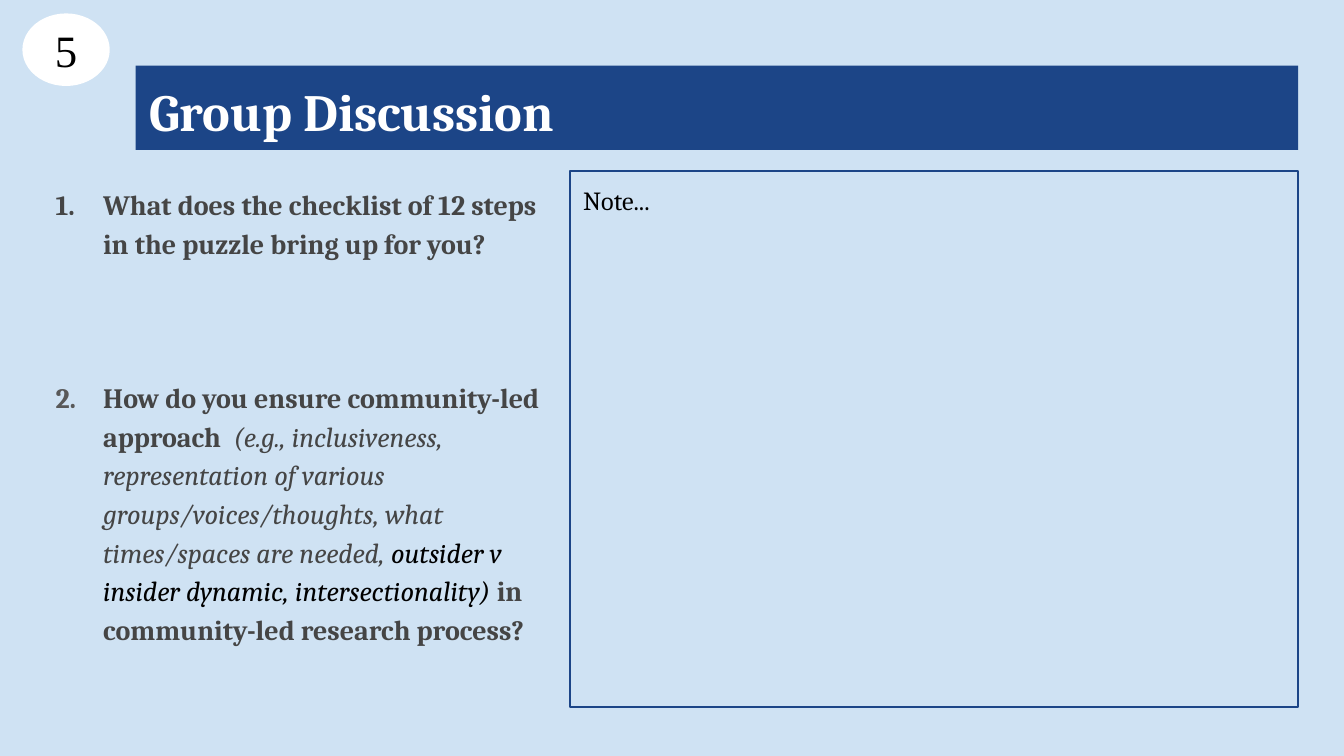
from pptx import Presentation
from pptx.dml.color import RGBColor
from pptx.enum import shapes, text
from pptx.oxml.ns import qn
from pptx.util import Pt
from lxml import etree

PALE_BLUE = RGBColor(0xCF, 0xE2, 0xF3)
NAVY = RGBColor(0x1C, 0x45, 0x87)
DARK_GRAY = RGBColor(0x45, 0x45, 0x45)
MID_GRAY = RGBColor(0x59, 0x59, 0x59)
WHITE = RGBColor(0xFF, 0xFF, 0xFF)
BLACK = RGBColor(0, 0, 0)
SERIF = "Cambria"

# Content: each question has a number colour and (text, bold, italic, colour) runs
TITLE = "Group Discussion"
STEP = "5"
NOTE = "Note..."
QUESTIONS = [
    (DARK_GRAY, [
        ("What does the checklist of 12 steps in the puzzle bring up for you?",
         True, False, DARK_GRAY),
    ]),
    (MID_GRAY, [
        ("How do you ensure community-led approach  ", True, False, DARK_GRAY),
        ("(e.g., inclusiveness, representation of various groups/voices/thoughts, "
         "what times/spaces are needed, ", False, True, DARK_GRAY),
        ("outsider v insider dynamic, intersectionality) ", False, True, BLACK),
        ("in community-led research process?", True, False, DARK_GRAY),
    ]),
]

# Layout in points: left, top, width, height
RIGHT = 695.5
TITLE_BOX = (72.7, 35.1, RIGHT - 72.7, 45.2)
QUESTION_BOX = (12.2, 90.7, 289.4, 269.3)
NOTE_BOX = (305.3, 91.7, RIGHT - 305.3, 287.2)
STEP_BOX = (12, 7.2, 46.8, 38.9)
INSET = 7.2
QUESTION_GAP = 62


def set_frame(shape, anchor=text.MSO_ANCHOR.TOP):
    frame = shape.text_frame
    frame.word_wrap = True
    frame.auto_size = text.MSO_AUTO_SIZE.NONE
    frame.vertical_anchor = anchor
    frame.margin_left = frame.margin_right = Pt(INSET)
    frame.margin_top = frame.margin_bottom = Pt(INSET)
    return frame


def write_line(frame, content, size, color, font=SERIF, bold=False,
               align=text.PP_ALIGN.LEFT):
    paragraph = frame.paragraphs[0]
    paragraph.text = content
    paragraph.alignment = align
    paragraph.font.name = font
    paragraph.font.size = Pt(size)
    paragraph.font.bold = bold
    paragraph.font.color.rgb = color


def add_plain_shape(slide, kind, box):
    shape = slide.shapes.add_shape(kind, *map(Pt, box))
    shape.shadow.inherit = False
    return shape


def number_paragraph(paragraph, number, color):
    properties = paragraph._p.get_or_add_pPr()
    properties.set("marL", str(Pt(36)))
    properties.set("indent", str(-Pt(25.5)))
    bullet_color = etree.SubElement(properties, qn("a:buClr"))
    etree.SubElement(bullet_color, qn("a:srgbClr"), val=str(color))
    etree.SubElement(properties, qn("a:buFont"), typeface=SERIF)
    etree.SubElement(properties, qn("a:buAutoNum"),
                     type="arabicPeriod", startAt=str(number))


presentation = Presentation()
presentation.slide_width, presentation.slide_height = Pt(720), Pt(405)
slide = presentation.slides.add_slide(presentation.slide_layouts[5])
slide.background.fill.solid()
slide.background.fill.fore_color.rgb = PALE_BLUE

# Title bar
title = slide.shapes.title
title.left, title.top, title.width, title.height = map(Pt, TITLE_BOX)
title.fill.solid()
title.fill.fore_color.rgb = NAVY
write_line(set_frame(title), TITLE, 28, WHITE, bold=True)

# Numbered questions
frame = set_frame(slide.shapes.add_textbox(*map(Pt, QUESTION_BOX)))
for number, (number_color, runs) in enumerate(QUESTIONS, 1):
    paragraph = frame.paragraphs[0] if number == 1 else frame.add_paragraph()
    paragraph.line_spacing = 1.15
    paragraph.space_before = Pt(0 if number == 1 else QUESTION_GAP)
    paragraph.font.name = SERIF
    paragraph.font.size = Pt(15)
    number_paragraph(paragraph, number, number_color)
    for content, bold, italic, color in runs:
        run = paragraph.add_run()
        run.text = content
        run.font.bold, run.font.italic = bold, italic
        run.font.color.rgb = color

# Note box
note = add_plain_shape(slide, shapes.MSO_SHAPE.RECTANGLE, NOTE_BOX)
note.fill.background()
note.line.color.rgb = NAVY
note.line.width = Pt(0.75)
write_line(set_frame(note), NOTE, 14, BLACK)

# Step number
badge = add_plain_shape(slide, shapes.MSO_SHAPE.OVAL, STEP_BOX)
badge.fill.solid()
badge.fill.fore_color.rgb = WHITE
badge.line.fill.background()
write_line(set_frame(badge, text.MSO_ANCHOR.MIDDLE), STEP, 24, BLACK,
           font="Times New Roman", align=text.PP_ALIGN.CENTER)

presentation.save("out.pptx")
